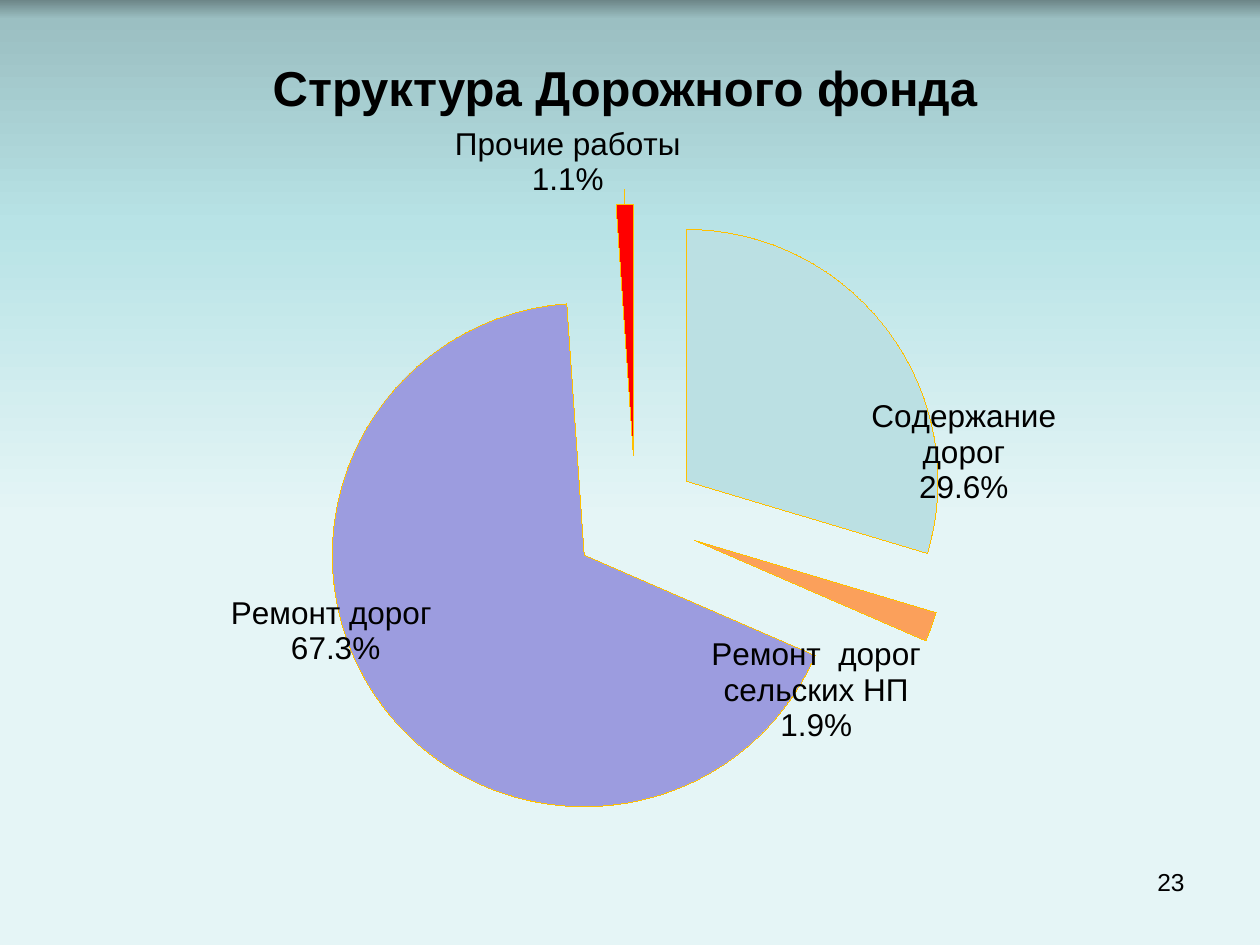
from dataclasses import dataclass

from lxml.etree import SubElement
from pptx import Presentation
from pptx.chart.data import CategoryChartData
from pptx.dml.color import RGBColor as Rgb
from pptx.enum.chart import XL_CHART_TYPE as ChartType, XL_LABEL_POSITION as LabelPosition
from pptx.enum.text import MSO_ANCHOR as Anchor, PP_ALIGN as Align
from pptx.oxml import parse_xml
from pptx.oxml.ns import nsdecls, qn
from pptx.util import Inches, Pt


@dataclass(frozen=True)
class Theme:
    font: str = "Arial"
    ink: str = "000000"
    outline: str = "FFC000"
    title_size: int = 28
    label_size: int = 18
    number_size: int = 14
    sky: tuple = ((0, "6D8688"), (2, "9BBFC2"), (24, "B8E3E6"), (55, "E5F5F6"))


theme = Theme()


def style_font(font, size, bold=False):
    font.name = theme.font
    font.size = Pt(size)
    font.bold = bold
    font.color.rgb = Rgb.from_string(theme.ink)


def manual_layout(settings):
    layout = parse_xml(f'<c:layout {nsdecls("c")}><c:manualLayout/></c:layout>')
    for key, value in settings.items():
        SubElement(layout[0], qn("c:" + key), val=str(value))
    return layout


prs = Presentation()
prs.slide_width = Inches(10)
prs.slide_height = Inches(7.5)
slide = prs.slides.add_slide(prs.slide_layouts[5])

sky = slide.background.fill
sky.gradient()
sky.gradient_angle = 270
stops = slide.element.find(".//" + qn("a:gsLst"))
for stop in list(stops):
    stops.remove(stop)
for percent, color in theme.sky:
    stop = SubElement(stops, qn("a:gs"), pos=str(percent * 1000))
    SubElement(stop, qn("a:srgbClr"), val=color)

heading = slide.shapes.title
heading.left, heading.top = Inches(0.17), Inches(0.3)
heading.width, heading.height = Inches(9.58), Inches(0.78)
heading.text_frame.text = "Структура Дорожного фонда"
heading.text_frame.vertical_anchor = Anchor.MIDDLE
heading_line = heading.text_frame.paragraphs[0]
heading_line.alignment = Align.CENTER
style_font(heading_line.runs[0].font, theme.title_size, True)

# name, share, slice colour, label shift as a fraction of the chart
works = [
    ("Содержание дорог", 29.6, "BBE0E3", (-0.02, 0.23)),
    ("Ремонт  дорог сельских НП", 1.9, "FBA05B", (-0.2, 0.01)),
    ("Ремонт дорог ", 67.3, "9C9CDF", (0.06, -0.14)),
    ("Прочие работы ", 1.1, "FF0000", (-0.05, -0.01)),
]
fund = CategoryChartData()
fund.categories = [work[0] for work in works]
fund.add_series("Series 1", [work[1] for work in works])
pie = slide.shapes.add_chart(
    ChartType.PIE, Inches(0.5), Inches(1), Inches(9), Inches(6.17), fund
).chart
pie.has_legend = False
pie.has_title = False
style_font(pie.font, theme.label_size)
pie.plots[0].vary_by_categories = True

plot_area = pie.element.find(".//" + qn("c:plotArea"))
for old_layout in plot_area.findall(qn("c:layout")):
    plot_area.remove(old_layout)
plot_area.insert(0, manual_layout({
    "layoutTarget": "inner", "xMode": "edge", "yMode": "edge",
    "x": 0.08, "y": 0.1, "w": 0.85, "h": 0.81,
}))

shares = pie.plots[0].series[0]
shares_xml = pie.element.find(".//" + qn("c:ser"))
shares.format.line.color.rgb = Rgb.from_string(theme.outline)
shares.format.line.width = Pt(0.75)

labels = shares.data_labels
labels.number_format = '0.0"%"'
labels.number_format_is_linked = False
labels.show_category_name = True
labels.show_value = True
labels.show_percentage = False
labels.position = LabelPosition.OUTSIDE_END
style_font(labels.font, theme.label_size)

for index, (name, share, color, (shift_x, shift_y)) in enumerate(works):
    piece = shares.points[index]
    piece.format.fill.solid()
    piece.format.fill.fore_color.rgb = Rgb.from_string(color)
    piece.format.line.color.rgb = Rgb.from_string(theme.outline)
    piece.format.line.width = Pt(0)
    style_font(piece.data_label.font, theme.label_size)
    piece.data_label.position = LabelPosition.OUTSIDE_END
    label = shares_xml.findall(".//" + qn("c:dLbl"))[index]
    label.find(qn("c:showCatName")).set("val", "1")
    label.find(qn("c:idx")).addnext(manual_layout({"x": shift_x, "y": shift_y}))
    label.find(qn("c:layout")).addnext(parse_xml(
        f'<c:numFmt {nsdecls("c")} formatCode="0.0&quot;%&quot;" sourceLinked="0"/>'
    ))
    SubElement(label, qn("c:separator")).text = "\n"

explosion = f'<c:explosion {nsdecls("c")} val="25"/>'
shares_xml.find(qn("c:spPr")).addnext(parse_xml(explosion))
for piece_xml in shares_xml.findall(qn("c:dPt")):
    piece_xml.find(qn("c:spPr")).addprevious(parse_xml(explosion))

page = slide.shapes.add_textbox(Inches(7.17), Inches(6.83), Inches(2.33), Inches(0.52))
page.text_frame.word_wrap = True
page.text_frame.text = "23"
page_line = page.text_frame.paragraphs[0]
page_line.alignment = Align.RIGHT
style_font(page_line.runs[0].font, theme.number_size)

prs.save("out.pptx")
